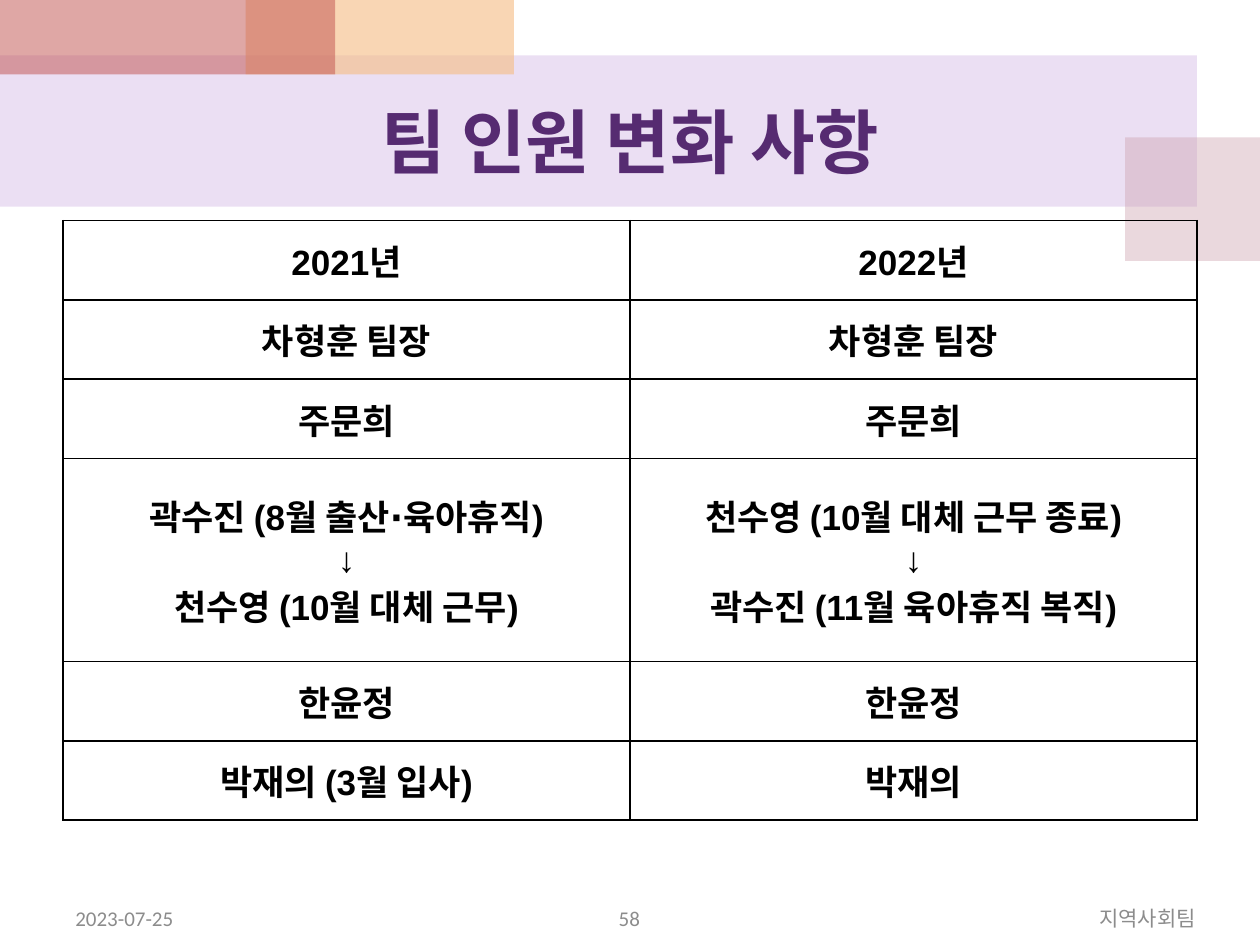
from lxml import etree
from pptx import Presentation
from pptx.dml.color import RGBColor
from pptx.enum.shapes import MSO_SHAPE
from pptx.enum.text import MSO_ANCHOR, PP_ALIGN
from pptx.oxml.ns import qn
from pptx.util import Inches, Pt

RECT = MSO_SHAPE.RECTANGLE
MIDDLE = MSO_ANCHOR.MIDDLE
LEFT, CENTER, RIGHT = PP_ALIGN.LEFT, PP_ALIGN.CENTER, PP_ALIGN.RIGHT

COLORS = {
    "band": "BF98D8", "rose": "CC9EAC", "peach": "F5BC83", "red": "C0504D",
    "title": "562B71", "text": "000000", "line": "000000", "footer": "8C8C8C",
}
TITLE_FONT = {"name": "Arial", "size": Pt(40), "bold": True}
CELL_FONT = {"name": "Arial", "size": Pt(20), "bold": True}
FOOTER_FONT = {"name": "Calibri", "size": Pt(12), "bold": False}

MARGIN, CONTENT_W = 0.5, 9
ROW_H, CHANGE_ROW_H = 0.63, 1.61

DECOR = [  # box, colour, opacity in percent
    ((0, 0.44, 9.5, 1.2), "band", 30),
    ((8.93, 1.09, 1.07, 0.98), "rose", 40),
    ((1.95, 0, 2.13, 0.59), "peach", 60),
    ((0, 0, 2.66, 0.59), "red", 50),
]
MEMBERS = [
    ("2021년", "2022년"),
    ("차형훈 팀장", "차형훈 팀장"),
    ("주문희", "주문희"),
    ("곽수진 (8월 출산∙육아휴직)\n↓\n천수영 (10월 대체 근무)",
     "천수영 (10월 대체 근무 종료)\n↓\n곽수진 (11월 육아휴직 복직)"),
    ("한윤정", "한윤정"),
    ("박재의 (3월 입사)", "박재의"),
]
FOOTER = [  # left, width, text, alignment
    (0.5, 2.33, "2023-07-25", LEFT),
    (6.42, 3.17, "지역사회팀", RIGHT),
    (3.83, 2.33, "58", CENTER),
]


def rgb(key):
    return RGBColor.from_string(COLORS[key])


def inches(box):
    return [Inches(v) for v in box]


def write(tf, text, font, color, align):
    """Fill a text frame, one paragraph per line of text."""
    tf.text = text
    for p in tf.paragraphs:
        p.alignment = align
        for r in p.runs:
            for name, value in font.items():
                setattr(r.font, name, value)
            r.font.color.rgb = rgb(color)


def add_block(s, box, color, opacity):
    block = s.shapes.add_shape(RECT, *inches(box))
    block.shadow.inherit = False
    block.line.fill.background()
    block.fill.solid()
    block.fill.fore_color.rgb = rgb(color)
    srgb = block.element.spPr.find(".//" + qn("a:srgbClr"))
    etree.SubElement(srgb, qn("a:alpha"), val=str(opacity * 1000))


def place_title(s, box, text):
    title = s.shapes.title
    title.left, title.top, title.width, title.height = inches(box)
    tf = title.text_frame
    tf.vertical_anchor = MIDDLE
    write(tf, text, TITLE_FONT, "title", CENTER)
    title.element.getparent().append(title.element)  # in front of the blocks


def add_borders(cell):
    """Draw all four sides; the schema wants them ahead of the cell fill."""
    tcPr = cell._tc.get_or_add_tcPr()
    for i, side in enumerate(("a:lnL", "a:lnR", "a:lnT", "a:lnB")):
        ln = etree.Element(qn(side), w=str(Pt(1)))
        fill = etree.SubElement(ln, qn("a:solidFill"))
        etree.SubElement(fill, qn("a:srgbClr"), val=COLORS["line"])
        tcPr.insert(i, ln)


def add_member_table(s, left, top, width, rows):
    heights = [CHANGE_ROW_H if "\n" in row[0] else ROW_H for row in rows]
    box = inches((left, top, width, sum(heights)))
    table = s.shapes.add_table(len(rows), len(rows[0]), *box).table
    table.first_row = table.horz_banding = False
    for i, (row, height) in enumerate(zip(rows, heights)):
        table.rows[i].height = Inches(height)
        for j, text in enumerate(row):
            cell = table.cell(i, j)
            cell.vertical_anchor = MIDDLE
            cell.fill.background()
            add_borders(cell)
            write(cell.text_frame, text, CELL_FONT, "text", CENTER)


def add_footer(s, top, height):
    for left, width, text, align in FOOTER:
        tf = s.shapes.add_textbox(*inches((left, top, width, height))).text_frame
        tf.word_wrap = True
        tf.vertical_anchor = MIDDLE
        write(tf, text, FOOTER_FONT, "footer", align)


def main():
    prs = Presentation()
    prs.slide_width, prs.slide_height = Inches(10), Inches(7.5)
    s = prs.slides.add_slide(prs.slide_layouts[5])
    for box, color, opacity in DECOR:
        add_block(s, box, color, opacity)
    place_title(s, (MARGIN, 0.59, CONTENT_W, 1.05), "팀 인원 변화 사항")
    add_member_table(s, MARGIN, 1.75, CONTENT_W, MEMBERS)
    add_footer(s, 7.15, 0.27)
    prs.save("out.pptx")


if __name__ == "__main__":
    main()
